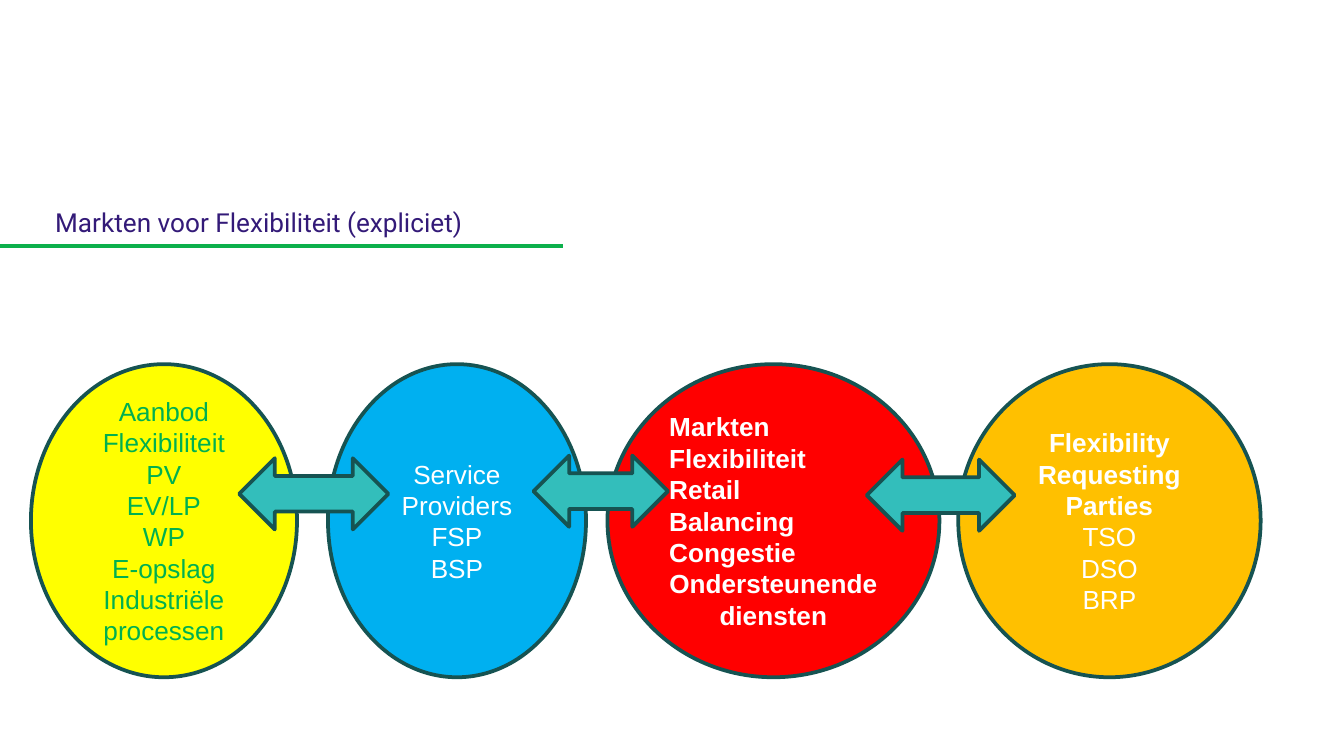
from lxml import etree
from pptx import Presentation
from pptx.dml.color import RGBColor
from pptx.enum.shapes import MSO_CONNECTOR, MSO_SHAPE
from pptx.enum.text import MSO_ANCHOR, MSO_AUTO_SIZE, PP_ALIGN
from pptx.oxml.ns import qn
from pptx.util import Inches, Pt

LEFT, CENTER = PP_ALIGN.LEFT, PP_ALIGN.CENTER
TOP, MIDDLE = MSO_ANCHOR.TOP, MSO_ANCHOR.MIDDLE
OVAL, DOUBLE_ARROW = MSO_SHAPE.OVAL, MSO_SHAPE.LEFT_RIGHT_ARROW
STRAIGHT = MSO_CONNECTOR.STRAIGHT
NO_FIT = MSO_AUTO_SIZE.NONE

COLORS = {
    "title": "331A78", "rule": "0DB04C", "outline": "165352",
    "arrow": "33BEBB", "white": "FFFFFF", "green": "00B050",
    "yellow": "FFFF00", "blue": "00B0F0", "red": "FF0000", "orange": "FFC000",
}
OVAL_TOP, OVAL_HEIGHT = 2.71, 2.33
ARROW_HEIGHT = 0.53

PARTIES = [
    (7.13, 2.25, "orange", "white", [
        ("Flexibility Requesting Parties", True, CENTER),
        *[(name, False, CENTER) for name in ("TSO", "DSO", "BRP")]]),
    (4.52, 2.47, "red", "white", [
        *[(name, True, LEFT) for name in
          ("Markten Flexibiliteit", "Retail", "Balancing", "Congestie")],
        ("Ondersteunende diensten", True, CENTER)]),
    (2.44, 1.92, "blue", "white", [
        (name, False, CENTER) for name in ("Service Providers", "FSP", "BSP")]),
    (0.23, 1.98, "yellow", "green", [
        (name, False, CENTER) for name in
        ("Aanbod Flexibiliteit", "PV", "EV/LP", "WP", "E-opslag",
         "Industriële processen")]),
]
ARROWS = [(1.78, 3.41, 1.11), (3.97, 3.39, 1.0), (6.45, 3.42, 1.1)]


def color(name):
    return RGBColor.from_string(COLORS[name])


def format_font(font, face, color_name, bold=False):
    font.name = face
    font.size = Pt(14)
    font.bold = bold
    font.color.rgb = color(color_name)


def add_outlined_shape(page, kind, left, top, width, height, fill):
    shape = page.shapes.add_shape(
        kind, Inches(left), Inches(top), Inches(width), Inches(height))
    shape.shadow.inherit = False
    shape.fill.solid()
    shape.fill.fore_color.rgb = color(fill)
    shape.line.color.rgb = color("outline")
    shape.line.width = Pt(2)
    return shape


def add_heading(page, left, top, width, height):
    rule_top = Inches(top + 0.31)
    rule = page.shapes.add_connector(
        STRAIGHT, Inches(left - 1.09), rule_top,
        Inches(left + 3.85), rule_top)
    rule.line.color.rgb = color("rule")
    rule.line.width = Pt(2)
    etree.SubElement(rule._element.spPr, qn("a:effectLst"))

    title = page.shapes.title
    title.left, title.top = Inches(left), Inches(top)
    title.width, title.height = Inches(width), Inches(height)
    frame = title.text_frame
    frame.text = "Markten voor Flexibiliteit (expliciet)"
    frame.word_wrap = True
    frame.auto_size = NO_FIT
    frame.vertical_anchor = TOP
    frame.margin_left = frame.margin_right = Inches(0.07)
    frame.margin_top = frame.margin_bottom = Inches(0.04)
    para = frame.paragraphs[0]
    para.alignment = LEFT
    para.line_spacing = 0.9
    para.space_before = Pt(0)
    format_font(para.runs[0].font, "Roboto", "title")


def add_party(page, left, top, width, height, fill, text_color, lines):
    oval = add_outlined_shape(page, OVAL, left, top, width, height, fill)
    frame = oval.text_frame
    frame.word_wrap = True
    frame.vertical_anchor = MIDDLE
    frame.text = "\n".join(text for text, _, _ in lines)
    for para, (_, bold, alignment) in zip(frame.paragraphs, lines):
        para.alignment = alignment
        format_font(para.runs[0].font, "Arial", text_color, bold)


def main():
    deck = Presentation()
    deck.slide_width = Inches(10)
    deck.slide_height = deck.slide_width * 9 // 16
    page = deck.slides.add_slide(deck.slide_layouts.get_by_name("Title Only"))
    add_heading(page, 0.34, 1.52, 4.13, 0.47)
    for left, width, fill, text_color, lines in PARTIES:
        add_party(page, left, OVAL_TOP, width, OVAL_HEIGHT,
                  fill, text_color, lines)
    for left, top, width in ARROWS:
        add_outlined_shape(page, DOUBLE_ARROW, left, top, width,
                           ARROW_HEIGHT, "arrow")
    deck.save("out.pptx")


if __name__ == "__main__":
    main()
